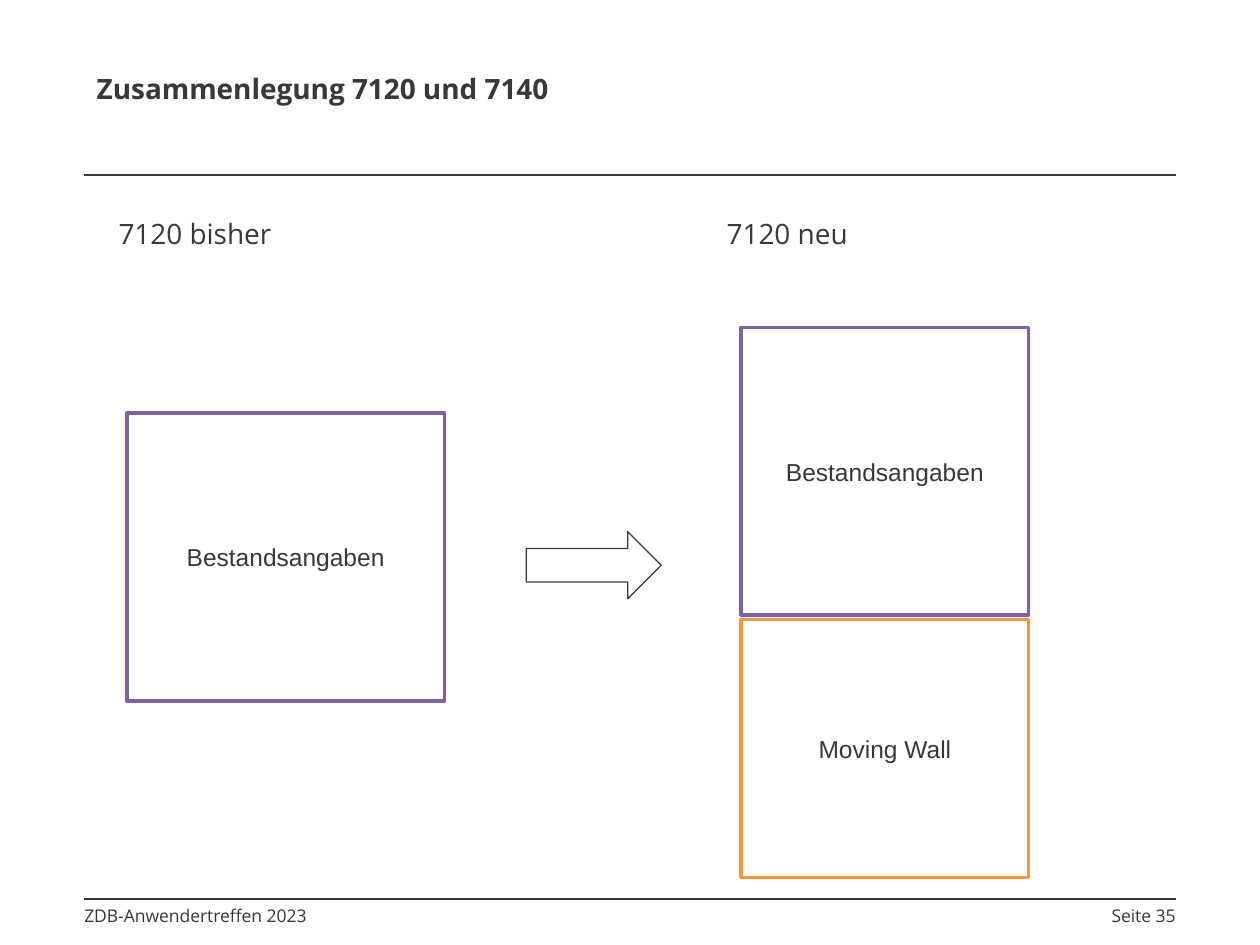
from lxml.etree import SubElement
from pptx import Presentation
from pptx.dml.color import RGBColor
from pptx.enum.shapes import MSO_CONNECTOR as Connector, MSO_SHAPE as Shape
from pptx.enum.text import MSO_ANCHOR as Anchor, PP_ALIGN as Align
from pptx.oxml.ns import qn
from pptx.util import Cm, Pt

INK = "3C3737"
PURPLE = "8064A2"
ORANGE = "F79646"
WHITE = "FFFFFF"
LEFT, RIGHT = 1.7, 23.7
HEADER_Y, FOOTER_Y = 3.53, 18.12


def color(value):
    """Turn a hex string into a colour."""
    return RGBColor.from_string(value)


def write(para, text, font="Open Sans", size=16, bold=False, align=Align.LEFT):
    """Write one formatted span into a paragraph."""
    para.alignment = align
    span = para.add_run()
    span.text = text
    span.font.name = font
    span.font.size = Pt(size)
    span.font.bold = bold
    span.font.color.rgb = color(INK)


def add_text_box(page, left, top, width, height, side_inset=0.25):
    """Add a wrapping text box and return its first paragraph."""
    frame = page.shapes.add_textbox(Cm(left), Cm(top), Cm(width), Cm(height)).text_frame
    frame.word_wrap = True
    frame.margin_left = frame.margin_right = Cm(side_inset)
    return frame.paragraphs[0]


def add_rule(page, y):
    """Draw a horizontal rule between the page margins."""
    rule = page.shapes.add_connector(Connector.STRAIGHT, Cm(LEFT), Cm(y), Cm(RIGHT), Cm(y))
    rule.line.color.rgb = color(INK)
    rule.line.width = Pt(1)
    SubElement(rule._element.spPr, qn("a:effectLst"))


def add_outline(page, kind, left, top, width, height, line, weight):
    """Add a white preset shape with a coloured outline."""
    shape = page.shapes.add_shape(kind, Cm(left), Cm(top), Cm(width), Cm(height))
    shape.shadow.inherit = False
    shape.fill.solid()
    shape.fill.fore_color.rgb = color(WHITE)
    shape.line.color.rgb = color(line)
    shape.line.width = Pt(weight)
    return shape


def add_field_box(page, text, left, top, width, height, line):
    """Add an outlined rectangle with a centred label."""
    frame = add_outline(page, Shape.RECTANGLE, left, top, width, height, line, 2).text_frame
    frame.word_wrap = False
    frame.vertical_anchor = Anchor.MIDDLE
    write(frame.paragraphs[0], text, font="Arial", size=14, align=Align.CENTER)


def main():
    """Build the slide and save it."""
    deck = Presentation()
    deck.slide_width, deck.slide_height = Cm(25.4), Cm(19.05)
    page = deck.slides.add_slide(deck.slide_layouts[6])

    for y in (FOOTER_Y, HEADER_Y):
        add_rule(page, y)
    write(add_text_box(page, LEFT, FOOTER_Y, 7.4, 0.6, side_inset=0),
          "ZDB-Anwendertreffen 2023", size=10)
    write(add_text_box(page, RIGHT - 2.4, FOOTER_Y, 2.4, 0.6, side_inset=0),
          "Seite 35", size=10, align=Align.RIGHT)
    write(add_text_box(page, LEFT, 1.32, 15.8, 2.21),
          "Zusammenlegung 7120 und 7140", bold=True)
    for heading, left in (("7120 bisher", 2.14), ("7120 neu", 14.4)):
        write(add_text_box(page, left, 4.24, 6.4, 1), heading)

    add_field_box(page, "Bestandsangaben", 2.56, 8.33, 6.4, 5.8, PURPLE)
    add_field_box(page, "Bestandsangaben", 14.94, 6.6, 5.8, 5.8, PURPLE)
    add_field_box(page, "Moving Wall", 14.94, 12.49, 5.8, 5.2, ORANGE)
    add_outline(page, Shape.RIGHT_ARROW, 10.61, 10.72, 2.72, 1.35, INK, 0.75)

    deck.save("out.pptx")


if __name__ == "__main__":
    main()
